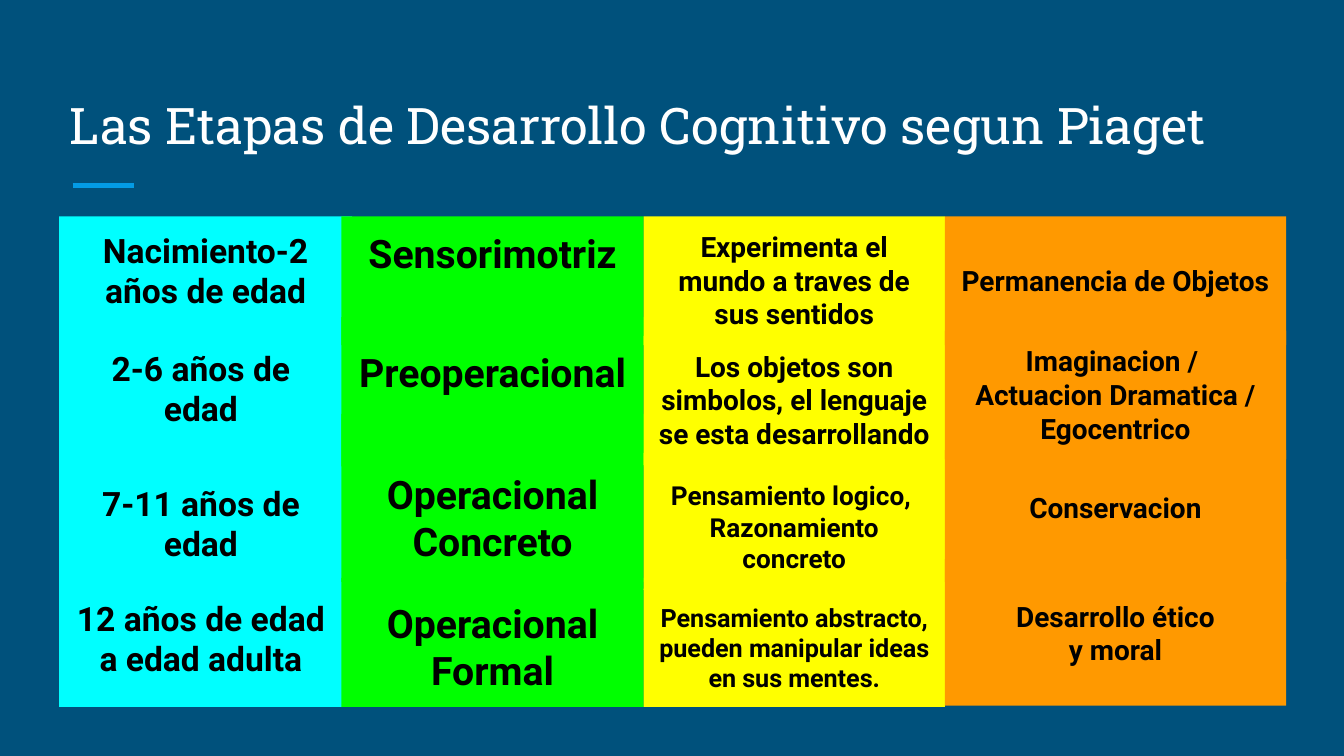
from dataclasses import dataclass

from lxml.etree import SubElement
from pptx import Presentation
from pptx.dml.color import RGBColor
from pptx.enum.shapes import MSO_CONNECTOR as Connector
from pptx.enum.shapes import MSO_SHAPE as Shape
from pptx.enum.text import MSO_ANCHOR as Anchor
from pptx.enum.text import MSO_AUTO_SIZE as AutoSize
from pptx.enum.text import PP_ALIGN as Align
from pptx.oxml.ns import qn
from pptx.slide import Slide
from pptx.text.text import TextFrame
from pptx.util import Inches, Pt


@dataclass(frozen=True)
class Theme:
    background: str = "00517C"
    accent: str = "039BE5"
    title: str = "FFFFFF"
    text: str = "000000"
    ages: str = "00FFFF"
    stages: str = "00FF00"
    traits: str = "FFFF00"
    milestones: str = "FF9900"
    title_font: str = "Roboto Slab"
    body_font: str = "Roboto"
    title_size: float = 27
    age_size: float = 18
    stage_size: float = 21
    detail_size: float = 15
    logic_size: float = 14
    abstract_size: float = 13.5
    inset: float = 0.1


@dataclass(frozen=True)
class Cell:
    text: str
    top: float
    height: float
    lead: float = 0  # extra space above the text, in inches
    size: float | None = None  # replaces the column's type size
    width: float | None = None  # replaces the column's width


@dataclass(frozen=True)
class Column:
    left: float
    width: float
    fill: str
    size: float
    cells: tuple[Cell, ...]


THEME = Theme()

COLUMNS = (
    Column(0.44, 2.11, THEME.ages, THEME.age_size, (
        Cell("Nacimiento-2 años de edad", 1.61, 1.21, width=2.18),
        Cell("2-6 años de edad", 2.36, 1.36, lead=0.13),
        Cell("7-11 años de edad", 3.49, 0.87),
        Cell("12 años de edad a edad adulta", 4.35, 0.91),
    )),
    Column(2.54, 2.25, THEME.stages, THEME.stage_size, (
        Cell("Sensorimotriz", 1.61, 0.96),
        Cell("Preoperacional", 2.36, 1.11, lead=0.13),
        Cell("Operacional Concreto", 3.08, 1.25, lead=0.32),
        Cell("Operacional Formal", 4.3, 0.96, lead=0.06),
    )),
    Column(4.79, 2.24, THEME.traits, THEME.detail_size, (
        Cell("Experimenta el mundo a traves de sus sentidos", 1.61, 0.96),
        Cell("Los objetos son simbolos, el lenguaje se esta desarrollando", 2.5, 0.96),
        Cell("Pensamiento logico, \nRazonamiento concreto", 3.37, 1.02,
             lead=0.1, size=THEME.logic_size),
        Cell("Pensamiento abstracto, pueden manipular ideas en sus mentes.",
             4.38, 0.88, size=THEME.abstract_size),
    )),
    Column(7.03, 2.54, THEME.milestones, THEME.detail_size, (
        Cell("Permanencia de Objetos", 1.61, 0.96, lead=0.25),
        Cell("Imaginacion / \nActuacion Dramatica / Egocentrico", 2.46, 0.96),
        Cell("Conservacion", 3.35, 0.98, lead=0.2),
        Cell("Desarrollo ético\ny moral", 4.16, 1.09, lead=0.2),
    )),
)


def write_text(frame: TextFrame, text: str, font: str, size: float, color: str,
               align: Align, anchor: Anchor, bold: bool = False, lead: float = 0) -> None:
    frame.text = text
    frame.word_wrap = True
    frame.auto_size = AutoSize.NONE
    frame.vertical_anchor = anchor
    frame.margin_left = frame.margin_right = frame.margin_bottom = Inches(THEME.inset)
    frame.margin_top = Inches(THEME.inset + lead)
    for paragraph in frame.paragraphs:
        paragraph.alignment = align
        for run in paragraph.runs:
            run.font.name = font
            run.font.size = Pt(size)
            run.font.bold = bold
            run.font.color.rgb = RGBColor.from_string(color)


def draw_title(slide: Slide, text: str) -> None:
    title = slide.shapes.title
    title.left, title.top = Inches(0.42), Inches(0.5)
    title.width, title.height = Inches(9.15), Inches(0.75)
    write_text(title.text_frame, text, THEME.title_font, THEME.title_size,
               THEME.title, Align.LEFT, Anchor.BOTTOM)


def draw_accent(slide: Slide) -> None:
    accent = slide.shapes.add_connector(
        Connector.STRAIGHT, Inches(0.54), Inches(1.38), Inches(1), Inches(1.38))
    accent.line.color.rgb = RGBColor.from_string(THEME.accent)
    accent.line.width = Pt(3)
    SubElement(accent._element.spPr, qn("a:effectLst"))


def draw_column(slide: Slide, column: Column) -> None:
    for cell in column.cells:
        block = slide.shapes.add_shape(
            Shape.RECTANGLE, Inches(column.left), Inches(cell.top),
            Inches(cell.width or column.width), Inches(cell.height))
        block.shadow.inherit = False
        block.fill.solid()
        block.fill.fore_color.rgb = RGBColor.from_string(column.fill)
        block.line.fill.background()
        write_text(block.text_frame, cell.text, THEME.body_font,
                   cell.size or column.size, THEME.text, Align.CENTER,
                   Anchor.TOP, bold=True, lead=cell.lead)


def main() -> None:
    deck = Presentation()
    # Widescreen, 16:9
    deck.slide_width = Inches(10)
    deck.slide_height = Inches(10 * 9 / 16)
    slide = deck.slides.add_slide(deck.slide_layouts[5])

    # Background
    slide.background.fill.solid()
    slide.background.fill.fore_color.rgb = RGBColor.from_string(THEME.background)

    # Heading
    draw_accent(slide)
    draw_title(slide, "Las Etapas de Desarrollo Cognitivo segun Piaget")

    # Ages, stages, traits and milestones
    for column in COLUMNS:
        draw_column(slide, column)

    deck.save("out.pptx")


if __name__ == "__main__":
    main()
